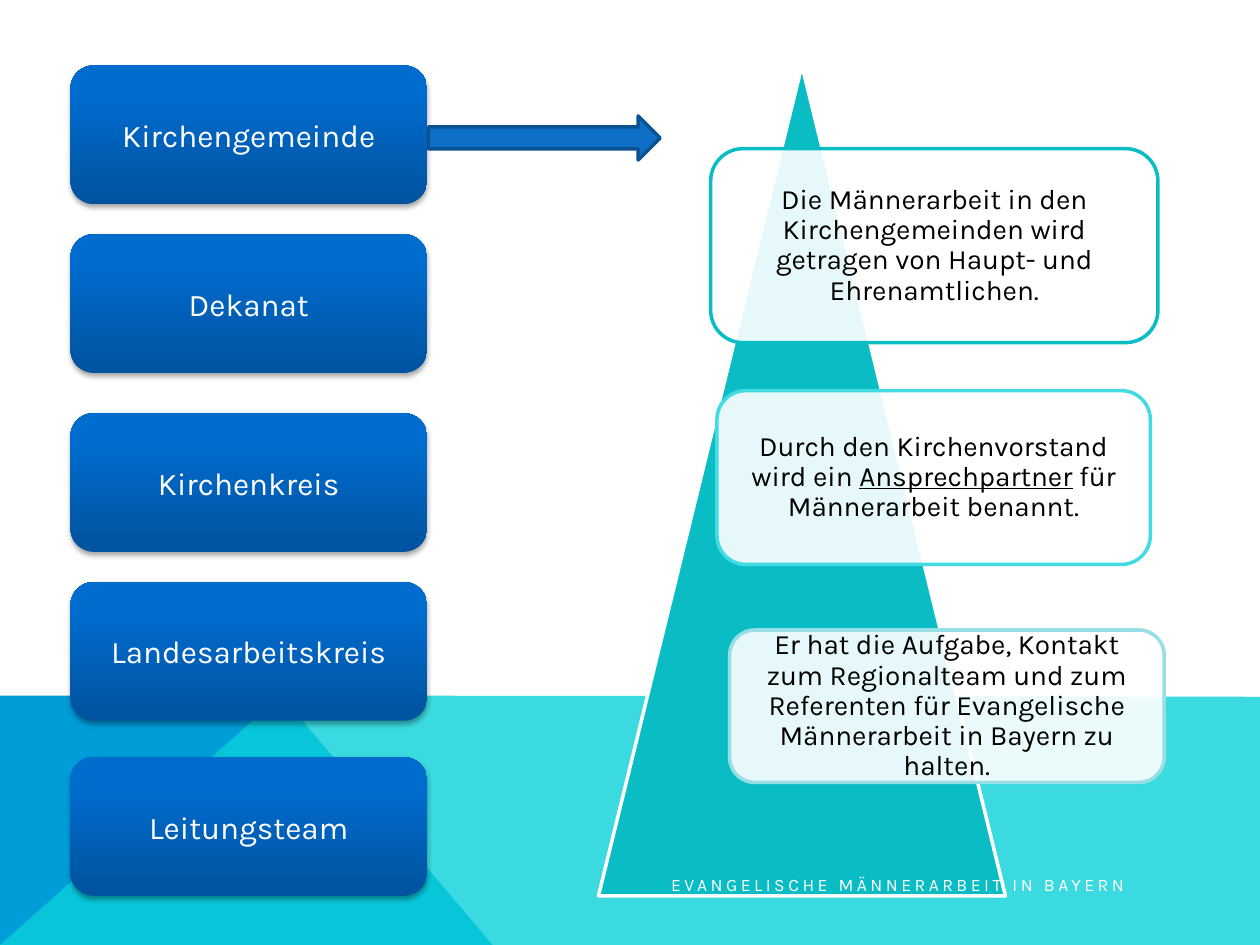
from pptx import Presentation
from pptx.dml.color import RGBColor as RGB
from pptx.enum.shapes import MSO_SHAPE as Kind
from pptx.enum.text import MSO_ANCHOR as Anchor, PP_ALIGN as Align
from pptx.oxml import parse_xml as xml
from pptx.oxml.ns import nsdecls
from pptx.util import Inches, Pt

NS = nsdecls("a")


def paint(shape, fill, line=None, alpha=None):
    shape.shadow.inherit = False
    shape.fill.solid()
    shape.fill.fore_color.rgb = RGB.from_string(fill)
    if alpha:
        tint = shape.fill._xPr.find(".//{*}srgbClr")
        tint.append(xml(f'<a:alpha {NS} val="{alpha * 1000}"/>'))
    if line:
        shape.line.color.rgb = RGB.from_string(line)
        shape.line.width = Pt(2)
    else:
        shape.line.fill.background()


def write(shape, parts, size, color, align, inset=None, space=None):
    frame = shape.text_frame
    form = {"word_wrap": True, "vertical_anchor": Anchor.MIDDLE}
    if inset:
        for side in ("left", "top", "right", "bottom"):
            form[f"margin_{side}"] = Inches(inset)
    for key, val in form.items():
        setattr(frame, key, val)
    para = frame.paragraphs[0]
    for key, val in {"alignment": align, "line_spacing": space}.items():
        setattr(para, key, val)
    for text, under in parts:
        run = para.add_run()
        run.text = text
        look = {"name": "Karla", "size": Pt(size), "underline": under}
        for key, val in look.items():
            setattr(run.font, key, val)
        run.font.color.rgb = RGB.from_string(color)
    return para


deck = Presentation()
deck.slide_width, deck.slide_height = Inches(10), Inches(7.5)
slide = deck.slides.add_slide(deck.slide_layouts[6])
shapes = slide.shapes

bands = [
    ([(0, 7.5), (0, 5.52), (2.23, 5.52), (3.91, 7.5)], "009DD9", None),
    ([(0, 7.5), (2.23, 5.52), (10, 5.53), (10, 7.5)], "0BD0D9", 80),
]
for points, color, alpha in bands:
    spots = [(Inches(x), Inches(y)) for x, y in points]
    pen = shapes.build_freeform(*spots[0])
    pen.add_line_segments(spots[1:], close=True)
    paint(pen.convert_to_shape(), color, alpha=alpha)

stops = "".join(
    f'<a:gs pos="{pos * 1000}"><a:srgbClr val="{color}"/></a:gs>'
    for pos, color in [(0, "00539F"), (80, "006CCE"), (100, "006DCF")]
)
blend = (f'<a:gradFill {NS} rotWithShape="1"><a:gsLst>{stops}</a:gsLst>'
         '<a:lin ang="16200000" scaled="0"/></a:gradFill>')
shade = (f'<a:outerShdw {NS} blurRad="{Pt(3.1)}" dist="{Pt(1.8)}" dir="5400000" '
         'rotWithShape="0"><a:srgbClr val="000000"><a:alpha val="35000"/>'
         '</a:srgbClr></a:outerShdw>')
levels = [
    ("Kirchengemeinde", 0.52),
    ("Dekanat", 1.86),
    ("Kirchenkreis", 3.28),
    ("Landesarbeitskreis", 4.62),
    ("Leitungsteam", 6.01),
]
for name, top in levels:
    box = shapes.add_shape(Kind.ROUNDED_RECTANGLE, Inches(0.56), Inches(top),
                           Inches(2.83), Inches(1.1))
    paint(box, "006CCE")
    props = box._element.spPr
    props.replace(props.find("{*}solidFill"), xml(blend))
    props.find("{*}effectLst").append(xml(shade))
    write(box, [(name, None)], 18, "FFFFFF", Align.CENTER)

peak = shapes.add_shape(Kind.ISOSCELES_TRIANGLE, Inches(4.75), Inches(0.52),
                        Inches(3.23), Inches(6.59))
paint(peak, "0ABDC5", "FFFFFF")

cards = [
    ((5.64, 1.18, 3.55, 1.54), 0.08, "0ABDC5", [
        ("Die Männerarbeit in den Kirchengemeinden wird getragen von "
         "Haupt- und Ehrenamtlichen.", None)]),
    ((5.69, 3.1, 3.44, 1.38), 0.07, "42DBE4", [
        ("Durch den Kirchenvorstand wird ein ", None),
        ("Ansprechpartner", True),
        (" für Männerarbeit benannt.", None)]),
    ((5.79, 5, 3.45, 1.21), 0.06, "97DFE5", [
        ("Er hat die Aufgabe, Kontakt zum Regionalteam und zum Referenten "
         "für Evangelische Männerarbeit in Bayern zu halten.", None)]),
]
for (left, top, width, height), pad, color, parts in cards:
    card = shapes.add_shape(Kind.ROUNDED_RECTANGLE, Inches(left), Inches(top),
                            Inches(width), Inches(height))
    paint(card, "FFFFFF", color, 90)
    label = shapes.add_textbox(Inches(left + pad), Inches(top + pad),
                               Inches(width - 2 * pad), Inches(height - 2 * pad))
    write(label, parts, 16, "000000", Align.CENTER, 0.07, 0.9)

arrow = shapes.add_shape(Kind.RIGHT_ARROW, Inches(3.4), Inches(0.92),
                         Inches(1.84), Inches(0.35))
paint(arrow, "0F6FC6", "0B5292")

foot = shapes.add_textbox(Inches(3.85), Inches(6.87), Inches(5.17), Inches(0.3))
line = write(foot, [("EVANGELISCHE MÄNNERARBEIT IN BAYERN", None)], 10,
             "FFFFFF", Align.RIGHT)
line.runs[0].font._element.set("spc", "200")

deck.save("out.pptx")
